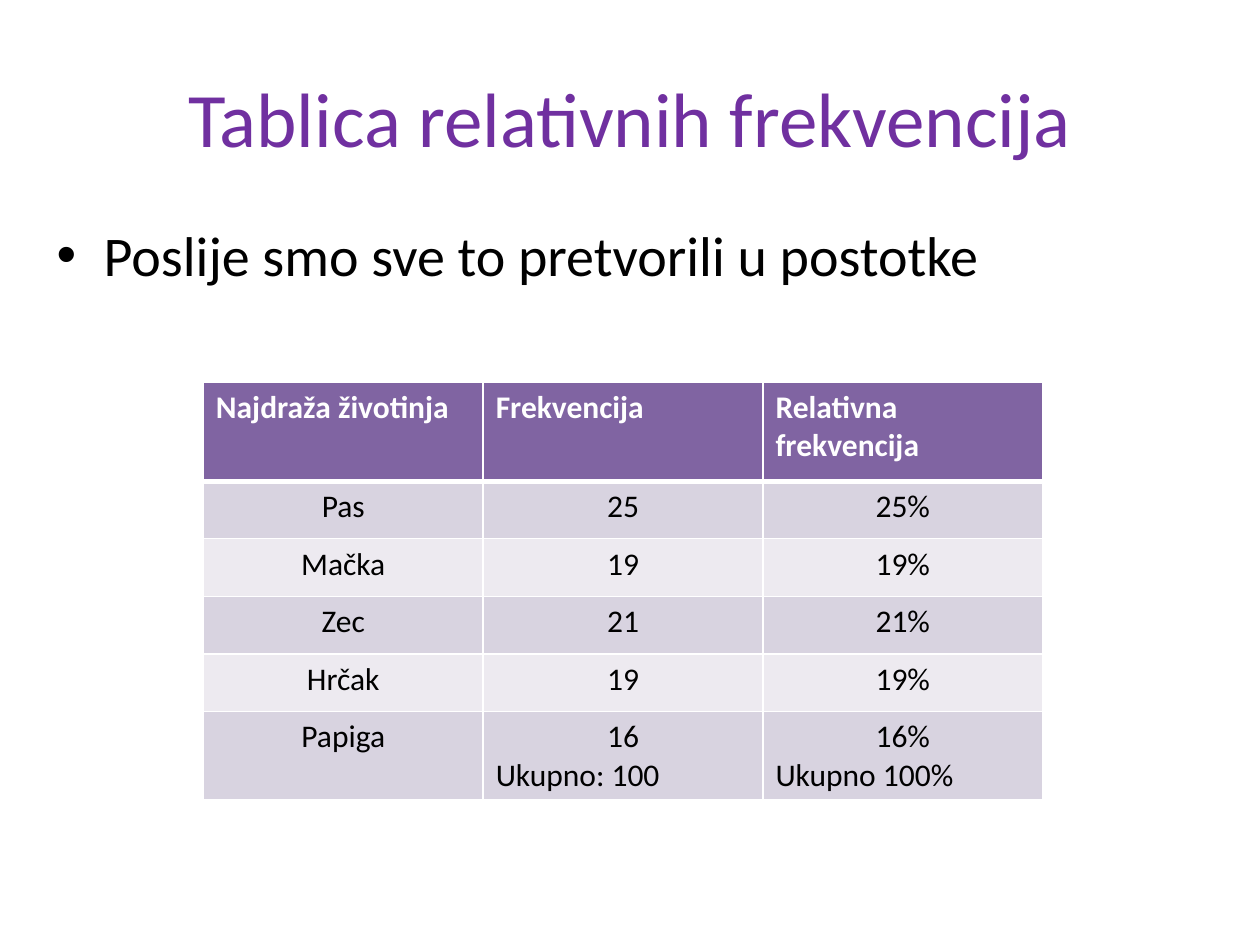
import pptx
import pptx.dml.color
import pptx.enum.text
import pptx.oxml.ns
import pptx.util
from lxml import etree
from pptx.util import Cm

FONT = "Calibri"
COLORS = {
    "title": "7030A0",
    "text": "000000",
    "white": "FFFFFF",
    "header": "8064A2",
    "odd_row": "D8D3E0",
    "even_row": "EDEAF0",
}
HEADERS = ["Najdraža životinja", "Frekvencija", "Relativna frekvencija"]
ANIMALS = [
    ["Pas", "25", "25%"],
    ["Mačka", "19", "19%"],
    ["Zec", "21", "21%"],
    ["Hrčak", "19", "19%"],
    ["Papiga", "16\nUkupno: 100", "16%\nUkupno 100%"],
]
COLUMN_WIDTH = Cm(5.64)
ROW_HEIGHTS = [Cm(2)] + [Cm(1.16)] * 4 + [Cm(1.76)]
CENTER = pptx.enum.text.PP_ALIGN.CENTER
LEFT = pptx.enum.text.PP_ALIGN.LEFT


def rgb(name):
    return pptx.dml.color.RGBColor.from_string(COLORS[name])


def add_child(parent, tag, **attributes):
    child = etree.SubElement(parent, pptx.oxml.ns.qn(tag))
    for key, value in attributes.items():
        child.set(key, str(value))
    return child


def style_paragraph(paragraph, size, color, alignment=LEFT, bold=False):
    paragraph.alignment = alignment
    font = paragraph.font
    font.name = FONT
    font.size = pptx.util.Pt(size)
    font.bold = bold
    font.color.rgb = rgb(color)


def add_text(slide, box, text, size, color, alignment=LEFT, anchor="TOP"):
    frame = slide.shapes.add_textbox(*box).text_frame
    frame.word_wrap = True
    frame.vertical_anchor = pptx.enum.text.MSO_ANCHOR[anchor]
    paragraph = frame.paragraphs[0]
    paragraph.text = text
    style_paragraph(paragraph, size, color, alignment)
    return paragraph


def add_bullet(paragraph, indent):
    paragraph.space_before = pptx.util.Pt(6.4)
    properties = paragraph._p.get_or_add_pPr()
    properties.set("marL", str(indent))
    properties.set("indent", str(-indent))
    add_child(properties, "a:buFont", typeface="Arial")
    add_child(properties, "a:buChar", char="•")
    # Default run properties come last in the schema order
    properties.append(properties.find(pptx.oxml.ns.qn("a:defRPr")))


def set_borders(cell, top, bottom):
    properties = cell._tc.get_or_add_tcPr()
    for side, width in {"L": 1, "R": 1, "T": top, "B": bottom}.items():
        line = add_child(properties, f"a:ln{side}", w=pptx.util.Pt(width))
        fill = add_child(line, "a:solidFill")
        add_child(fill, "a:srgbClr", val=COLORS["white"])


def fill_cell(cell, text, row):
    is_header = row == 0
    set_borders(cell, top=3 if row == 1 else 1, bottom=3 if is_header else 1)
    cell.fill.solid()
    band = "odd_row" if row % 2 else "even_row"
    cell.fill.fore_color.rgb = rgb("header" if is_header else band)

    cell.text = text
    for index, paragraph in enumerate(cell.text_frame.paragraphs):
        # Only the value itself is centred; headings and totals stay left
        alignment = LEFT if is_header or index else CENTER
        style_paragraph(paragraph, 18, "white" if is_header else "text",
                        alignment, is_header)


def add_frequency_table(slide, left, top):
    rows = [HEADERS] + ANIMALS
    table = slide.shapes.add_table(
        len(rows), len(HEADERS), left, top,
        COLUMN_WIDTH * len(HEADERS), sum(ROW_HEIGHTS)).table
    for column in table.columns:
        column.width = COLUMN_WIDTH
    for row, (texts, height) in enumerate(zip(rows, ROW_HEIGHTS)):
        table.rows[row].height = height
        for column, text in enumerate(texts):
            fill_cell(table.cell(row, column), text, row)


def main():
    presentation = pptx.Presentation()
    presentation.slide_width = Cm(25.4)
    presentation.slide_height = Cm(19.05)
    slide = presentation.slides.add_slide(presentation.slide_layouts[6])

    # Title
    add_text(slide, (Cm(1.27), Cm(0.76), Cm(22.86), Cm(3.18)),
             "Tablica relativnih frekvencija", 44, "title", CENTER, "MIDDLE")

    # Bullet
    bullet = add_text(slide, (Cm(0.89), Cm(4.32), Cm(22.86), Cm(12.57)),
                      "Poslije smo sve to pretvorili u postotke", 32, "text")
    add_bullet(bullet, Cm(0.95))

    # Table
    add_frequency_table(slide, Cm(4.1), Cm(7.7))

    presentation.save("out.pptx")


if __name__ == "__main__":
    main()
